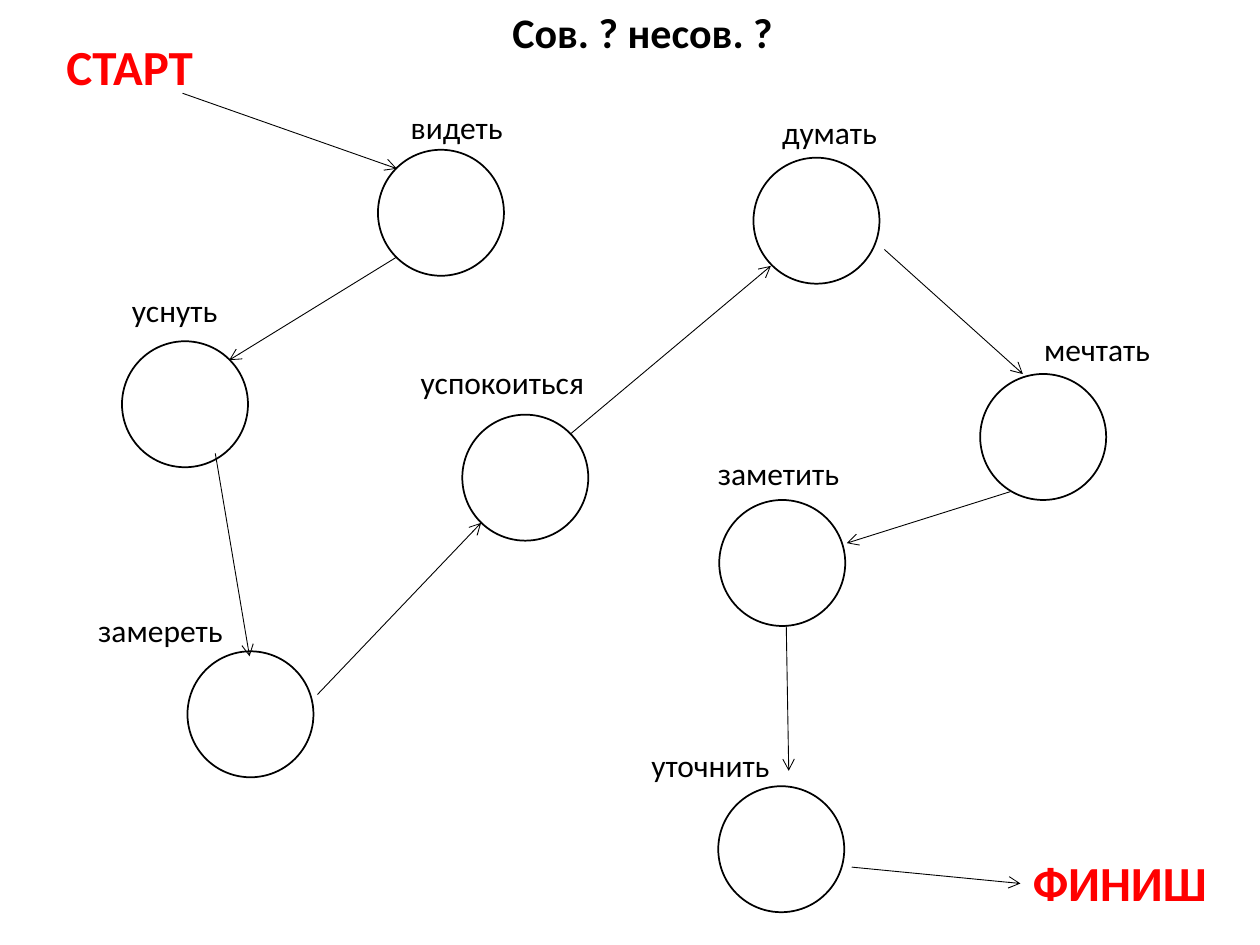
from lxml.etree import SubElement
from pptx import Presentation
from pptx.dml.color import RGBColor
from pptx.enum.shapes import MSO_CONNECTOR, MSO_SHAPE
from pptx.enum.text import MSO_AUTO_SIZE, PP_ALIGN
from pptx.oxml.ns import qn
from pptx.util import Cm, Pt

BLACK, WHITE, RED = "000000", "FFFFFF", "FF0000"

# Verb, circle corner, label box (left, top, width); centimetres
VERBS = [
    ("видеть", (7.62, 3.02), (8.03, 2.06, 2.39)),
    ("уснуть", (2.46, 6.88), (2.41, 5.74, 2.26)),
    ("замереть", (3.78, 13.13), (1.73, 12.19, 3.05)),
    ("успокоиться", (9.32, 8.36), (8.23, 7.19, 4.06)),
    ("думать", (15.19, 3.18), (15.52, 2.16, 2.44)),
    ("мечтать", (19.76, 7.54), (20.8, 6.53, 2.67)),
    ("заметить", (14.5, 10.08), (14.22, 9.02, 3)),
    ("уточнить", (14.48, 15.85), (12.88, 14.91, 2.92)),
]

# Route from start to finish: begin x, begin y, end x, end y
ROUTE = [
    (3.68, 1.88, 8, 3.4),
    (8, 5.18, 4.62, 7.26),
    (4.34, 9.14, 5.03, 13.23),
    (6.4, 14, 9.7, 10.54),
    (11.51, 8.74, 15.54, 5.36),
    (17.83, 5.03, 20.62, 7.54),
    (20.37, 9.91, 17.07, 10.95),
    (15.85, 12.6, 15.9, 15.54),
    (17.17, 17.48, 20.57, 17.81),
]


def color(hex_value):
    return RGBColor.from_string(hex_value)


class MazeSlide:
    font_name = "Calibri"
    diameter = 2.54

    def __init__(self, slide):
        self.slide = slide

    def add_circle(self, left, top):
        shape = self.slide.shapes.add_shape(
            MSO_SHAPE.OVAL, Cm(left), Cm(top), Cm(self.diameter), Cm(self.diameter))
        shape.shadow.inherit = False
        shape.fill.solid()
        shape.fill.fore_color.rgb = color(WHITE)
        shape.line.color.rgb = color(BLACK)
        shape.line.width = Pt(1)

    def add_arrow(self, *ends):
        connector = self.slide.shapes.add_connector(
            MSO_CONNECTOR.STRAIGHT, *(Cm(value) for value in ends))
        connector.line.color.rgb = color(BLACK)
        connector.line.width = Pt(0.5)
        line = connector.line._get_or_add_ln()
        SubElement(line, qn("a:tailEnd"), type="arrow")
        SubElement(connector._element.spPr, qn("a:effectLst"))

    def add_text(self, text, left, top, width, height=1.02, *, size=18,
                 text_color=BLACK, bold=False, align=PP_ALIGN.LEFT, wrap=False):
        shape = self.slide.shapes.add_textbox(Cm(left), Cm(top), Cm(width), Cm(height))
        frame = shape.text_frame
        frame.word_wrap = wrap
        frame.auto_size = MSO_AUTO_SIZE.SHAPE_TO_FIT_TEXT
        paragraph = frame.paragraphs[0]
        paragraph.alignment = align
        run = paragraph.add_run()
        run.text = text
        run.font.name = self.font_name
        run.font.size = Pt(size)
        run.font.bold = bold
        run.font.color.rgb = color(text_color)


def main():
    presentation = Presentation()
    presentation.slide_width = Cm(25.4)
    presentation.slide_height = Cm(19.05)
    maze = MazeSlide(presentation.slides.add_slide(presentation.slide_layouts[6]))

    for _, corner, _ in VERBS:
        maze.add_circle(*corner)
    for ends in ROUTE:
        maze.add_arrow(*ends)
    for verb, _, box in VERBS:
        maze.add_text(verb, *box, wrap=verb == "успокоиться")

    marker = {"size": 28, "text_color": RED, "bold": True}
    maze.add_text("СТАРТ", 0.53, 0.61, 4.17, 1.45, align=PP_ALIGN.CENTER, wrap=True, **marker)
    maze.add_text("ФИНИШ", 20.57, 17.07, 4.06, 1.45, **marker)
    maze.add_text("Сов. ? несов. ?", 10.08, 0, 5.82, 1.27, size=24, bold=True)

    presentation.save("out.pptx")


if __name__ == "__main__":
    main()
